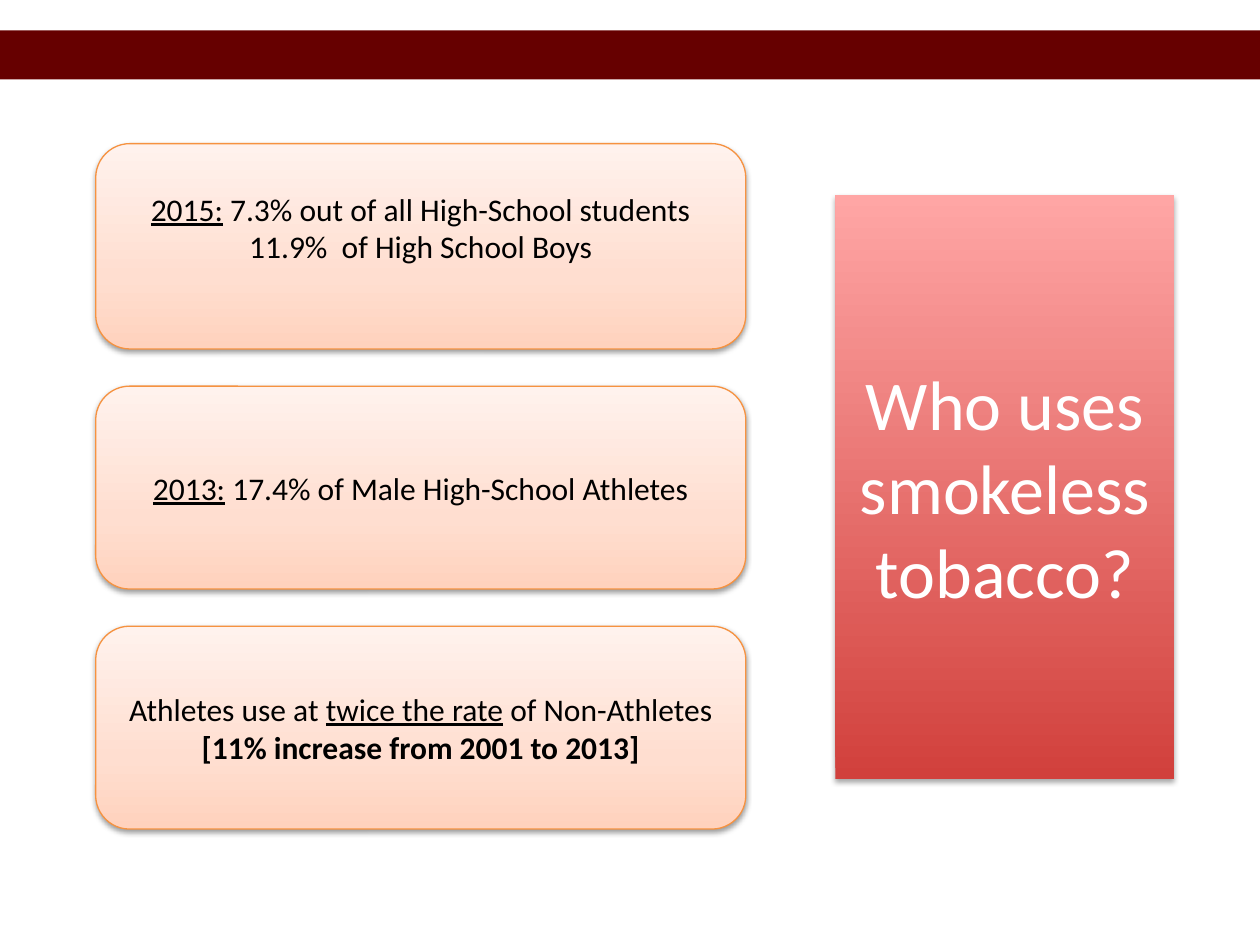
from dataclasses import dataclass

from lxml import etree
from pptx import Presentation
from pptx.dml.color import RGBColor
from pptx.enum.shapes import MSO_SHAPE as Preset
from pptx.enum.text import MSO_ANCHOR as Anchor, PP_ALIGN as Align
from pptx.oxml.ns import qn
from pptx.util import Inches, Pt


@dataclass(frozen=True)
class Theme:
    """Colours, gradients and type sizes of the slide."""
    font: str = "Calibri"
    band: str = "660000"
    card_line: str = "F69240"
    card_text: str = "000000"
    title_text: str = "FFFFFF"
    card_stops: tuple = ((0, "FFD2BD"), (35, "FFDED0"), (100, "FFF2ED"))
    title_stops: tuple = ((0, "D1403C"), (100, "FFA6A5"))
    card_size: int = 18
    title_size: int = 40


THEME = Theme()

CARDS = (
    (1.63, 0.35, ((("2015:", "u"), (" 7.3% out of all High-School students", "")),
                  (("11.9%  of High School Boys", ""),))),
    (1.61, 0.05, ((("2013:", "u"), (" 17.4% of Male High-School Athletes", "")),)),
    (1.61, 0.05, ((("Athletes use at ", ""), ("twice the rate", "u"), (" of Non-Athletes", "")),
                  (("[11% increase from 2001 to 2013]", "b"),))),
)


def add_panel(slide, preset, box):
    """Add a plain shape without line or shadow in a box given in inches."""
    shape = slide.shapes.add_shape(preset, *(Inches(length) for length in box))
    shape.shadow.inherit = False
    shape.line.fill.background()
    return shape


def fill_gradient(shape, stops):
    """Fill the shape with a gradient that rises from bottom to top."""
    shape.fill.gradient()
    shape.fill.gradient_angle = 90
    stop_list = shape.element.spPr.find(".//" + qn("a:gsLst"))
    for stop in list(stop_list):
        stop_list.remove(stop)
    for percent, color in stops:
        stop = etree.SubElement(stop_list, qn("a:gs"), pos=str(percent * 1000))
        etree.SubElement(stop, qn("a:srgbClr"), val=color)


def add_shadow(shape, opacity, distance):
    """Drop a soft black shadow straight down."""
    effects = shape.element.spPr.find(qn("a:effectLst"))
    shadow = etree.SubElement(effects, qn("a:outerShdw"), blurRad=str(Pt(3.1)),
                              dist=str(Pt(distance)), dir="5400000", rotWithShape="0")
    color = etree.SubElement(shadow, qn("a:srgbClr"), val="000000")
    etree.SubElement(color, qn("a:alpha"), val=str(opacity * 1000))


def write_text(shape, lines, size, color):
    """Write centred lines of runs, each run marked u, b or plain."""
    frame = shape.text_frame
    frame.word_wrap = True
    frame.vertical_anchor = Anchor.MIDDLE
    for index, runs in enumerate(lines):
        paragraph = frame.add_paragraph() if index else frame.paragraphs[0]
        paragraph.alignment = Align.CENTER
        paragraph.font.name = THEME.font
        paragraph.font.size = Pt(size)
        paragraph.font.color.rgb = RGBColor.from_string(color)
        for text, style in runs:
            run = paragraph.add_run()
            run.text = text
            if style == "u":
                run.font.underline = True
            elif style == "b":
                run.font.bold = True


def add_band(slide, box):
    """Draw the dark band across the top."""
    band = add_panel(slide, Preset.RECTANGLE, box)
    band.fill.solid()
    band.fill.fore_color.rgb = RGBColor.from_string(THEME.band)


def add_cards(slide, box):
    """Stack the fact cards in the box with equal gaps."""
    left, top, width, height = box
    gap = (height - sum(card[0] for card in CARDS)) / (len(CARDS) - 1)
    for card_height, bottom_margin, lines in CARDS:
        card = add_panel(slide, Preset.ROUNDED_RECTANGLE, (left, top, width, card_height))
        fill_gradient(card, THEME.card_stops)
        card.line.color.rgb = RGBColor.from_string(THEME.card_line)
        card.line.width = Pt(0.75)
        add_shadow(card, 38, 1.6)
        write_text(card, lines, THEME.card_size, THEME.card_text)
        card.text_frame.margin_bottom = Inches(bottom_margin)
        top += card_height + gap


def add_title(slide, box):
    """Place the red title panel."""
    title = add_panel(slide, Preset.RECTANGLE, box)
    fill_gradient(title, THEME.title_stops)
    add_shadow(title, 35, 1.8)
    write_text(title, ((("Who uses smokeless tobacco?", ""),),),
               THEME.title_size, THEME.title_text)


def main():
    """Build the slide and save it."""
    presentation = Presentation()
    presentation.slide_width = Inches(10)
    presentation.slide_height = Inches(7.5)
    slide = presentation.slides.add_slide(presentation.slide_layouts[6])
    add_band(slide, (0, 0.24, 10, 0.39))
    add_cards(slide, (0.76, 1.14, 5.16, 5.44))
    add_title(slide, (6.63, 1.55, 2.69, 4.63))
    presentation.save("out.pptx")


if __name__ == "__main__":
    main()
